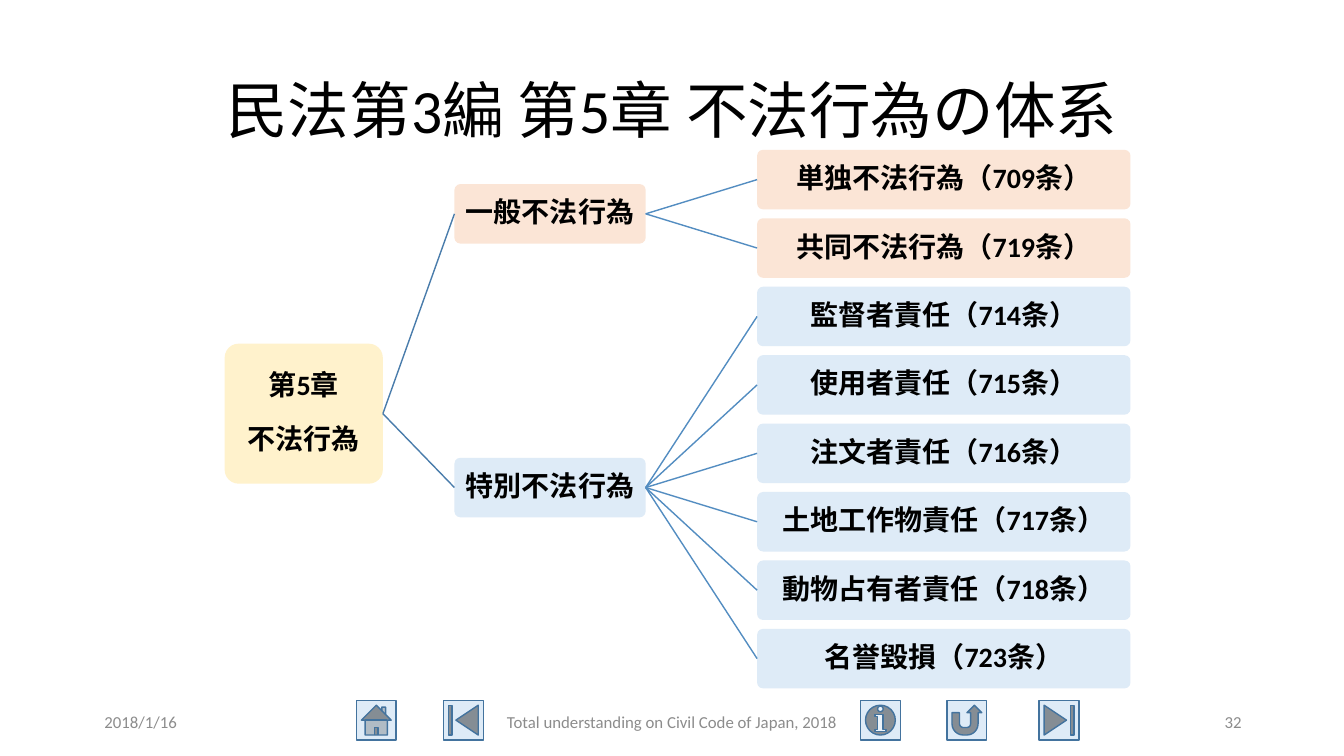
from dataclasses import dataclass

from lxml.etree import SubElement
from pptx import Presentation
from pptx.dml.color import RGBColor
from pptx.enum.shapes import MSO_CONNECTOR, MSO_SHAPE as Preset
from pptx.enum.text import MSO_ANCHOR as Anchor, PP_ALIGN as Align
from pptx.oxml.ns import qn
from pptx.shapes.autoshape import Shape
from pptx.shapes.shapetree import SlideShapes
from pptx.text.text import TextFrame
from pptx.util import Pt


@dataclass(frozen=True)
class Theme:
    font: str = "Calibri"
    title_size: float = 44
    node_size: float = 20
    footer_size: float = 12
    ink: str = "000000"
    footer_ink: str = "8C8C8C"
    root_fill: str = "FFF2CC"
    general_fill: str = "FBE5D6"
    special_fill: str = "DEEBF7"
    root_link: str = "497CAB"
    leaf_link: str = "538DC1"
    button_fill: str = "DEEBF7"
    button_line: str = "43739E"


@dataclass(frozen=True)
class Column:
    left: float
    width: float
    height: float


@dataclass(frozen=True)
class Category:
    label: str
    fill: str
    articles: tuple[str, ...]


@dataclass(frozen=True)
class Button:
    preset: Preset
    left: float


@dataclass(frozen=True)
class FooterItem:
    text: str
    left: float
    width: float
    align: Align


THEME = Theme()
ROOT_COLUMN = Column(160.5, 113, 100)
CATEGORY_COLUMN = Column(324.6, 136.6, 42.5)
ARTICLE_COLUMN = Column(540.8, 266.7, 42.5)
ROOT_MIDDLE = 295.5
FIRST_ARTICLE_MIDDLE = 128.3
ARTICLE_PITCH = 48.88
BUTTON_TOP, BUTTON_SIZE = 500.2, 28.4
FOOTER_TOP, FOOTER_HEIGHT = 501, 28.8

CATEGORIES = (
    Category("一般不法行為", THEME.general_fill,
             ("単独不法行為（709条）", "共同不法行為（719条）")),
    Category("特別不法行為", THEME.special_fill,
             ("監督者責任（714条）", "使用者責任（715条）", "注文者責任（716条）",
              "土地工作物責任（717条）", "動物占有者責任（718条）", "名誉毀損（723条）")),
)
BUTTONS = (
    Button(Preset.ACTION_BUTTON_HOME, 254.6),
    Button(Preset.ACTION_BUTTON_BEGINNING, 316.8),
    Button(Preset.ACTION_BUTTON_INFORMATION, 614.7),
    Button(Preset.ACTION_BUTTON_RETURN, 676.5),
    Button(Preset.ACTION_BUTTON_END, 742.3),
)
FOOTER = (
    FooterItem("2018/1/16", 67.5, 216, Align.LEFT),
    FooterItem("Total understanding on Civil Code of Japan, 2018", 318, 324, Align.CENTER),
    FooterItem("32", 678, 216, Align.RIGHT),
)


def write(frame: TextFrame, text: str, size: float, color: str, align: Align,
          bold: bool = False, line_spacing: float = 1.0, gap: float = 0) -> None:
    """Fill the frame with one paragraph per line, gap points apart."""
    frame.text = text
    frame.word_wrap = True
    frame.vertical_anchor = Anchor.MIDDLE
    font_format = {"name": THEME.font, "size": Pt(size), "bold": bold}
    for index, paragraph in enumerate(frame.paragraphs):
        paragraph.alignment = align
        paragraph.line_spacing = line_spacing
        paragraph.space_before = Pt(gap if index else 0)
        font = paragraph.runs[0].font
        for key, value in font_format.items():
            setattr(font, key, value)
        font.color.rgb = RGBColor.from_string(color)


def add_filled(shapes: SlideShapes, preset: Preset, left: float, top: float,
               width: float, height: float, fill: str) -> Shape:
    shape = shapes.add_shape(preset, Pt(left), Pt(top), Pt(width), Pt(height))
    shape.shadow.inherit = False
    shape.fill.solid()
    shape.fill.fore_color.rgb = RGBColor.from_string(fill)
    return shape


def add_node(shapes: SlideShapes, column: Column, middle: float, text: str, fill: str) -> Shape:
    node = add_filled(shapes, Preset.ROUNDED_RECTANGLE, column.left,
                      middle - column.height / 2, column.width, column.height, fill)
    node.adjustments[0] = 0.1
    node.line.fill.background()
    for side in ("left", "top", "right", "bottom"):
        setattr(node.text_frame, f"margin_{side}", Pt(2))
    write(node.text_frame, text, THEME.node_size, THEME.ink, Align.CENTER,
          bold=True, line_spacing=0.9, gap=17)
    return node


def link(shapes: SlideShapes, parent: Shape, child: Shape, color: str) -> None:
    connector = shapes.add_connector(MSO_CONNECTOR.STRAIGHT, 0, 0, 0, 0)
    connector.begin_connect(parent, 3)
    connector.end_connect(child, 1)
    connector.line.color.rgb = RGBColor.from_string(color)
    connector.line.width = Pt(1)
    SubElement(connector._element.spPr, qn("a:effectLst"))


def add_tree(shapes: SlideShapes) -> None:
    root = add_node(shapes, ROOT_COLUMN, ROOT_MIDDLE, "第5章\n不法行為", THEME.root_fill)
    first = FIRST_ARTICLE_MIDDLE
    for category in CATEGORIES:
        middles = [first + i * ARTICLE_PITCH for i in range(len(category.articles))]
        branch = add_node(shapes, CATEGORY_COLUMN, (middles[0] + middles[-1]) / 2,
                          category.label, category.fill)
        link(shapes, root, branch, THEME.root_link)
        for article, middle in zip(category.articles, middles):
            leaf = add_node(shapes, ARTICLE_COLUMN, middle, article, category.fill)
            link(shapes, branch, leaf, THEME.leaf_link)
        first = middles[-1] + ARTICLE_PITCH


def add_button(shapes: SlideShapes, button: Button) -> None:
    shape = add_filled(shapes, button.preset, button.left, BUTTON_TOP,
                       BUTTON_SIZE, BUTTON_SIZE, THEME.button_fill)
    shape.line.color.rgb = RGBColor.from_string(THEME.button_line)
    shape.line.width = Pt(1)


def add_footer_item(shapes: SlideShapes, item: FooterItem) -> None:
    box = shapes.add_textbox(Pt(item.left), Pt(FOOTER_TOP), Pt(item.width), Pt(FOOTER_HEIGHT))
    write(box.text_frame, item.text, THEME.footer_size, THEME.footer_ink, item.align)


def main() -> None:
    deck = Presentation()
    deck.slide_width, deck.slide_height = Pt(960), Pt(540)
    shapes = deck.slides.add_slide(deck.slide_layouts.get_by_name("Title Only")).shapes

    title = shapes.title
    title_place = {"left": Pt(66), "top": Pt(28.8), "width": Pt(828), "height": Pt(104.4)}
    for key, value in title_place.items():
        setattr(title, key, value)
    write(title.text_frame, "民法第3編 第5章 不法行為の体系", THEME.title_size, THEME.ink,
          Align.CENTER, line_spacing=0.9)

    for button in BUTTONS:
        add_button(shapes, button)
    add_tree(shapes)
    for item in FOOTER:
        add_footer_item(shapes, item)
    deck.save("out.pptx")


if __name__ == "__main__":
    main()
